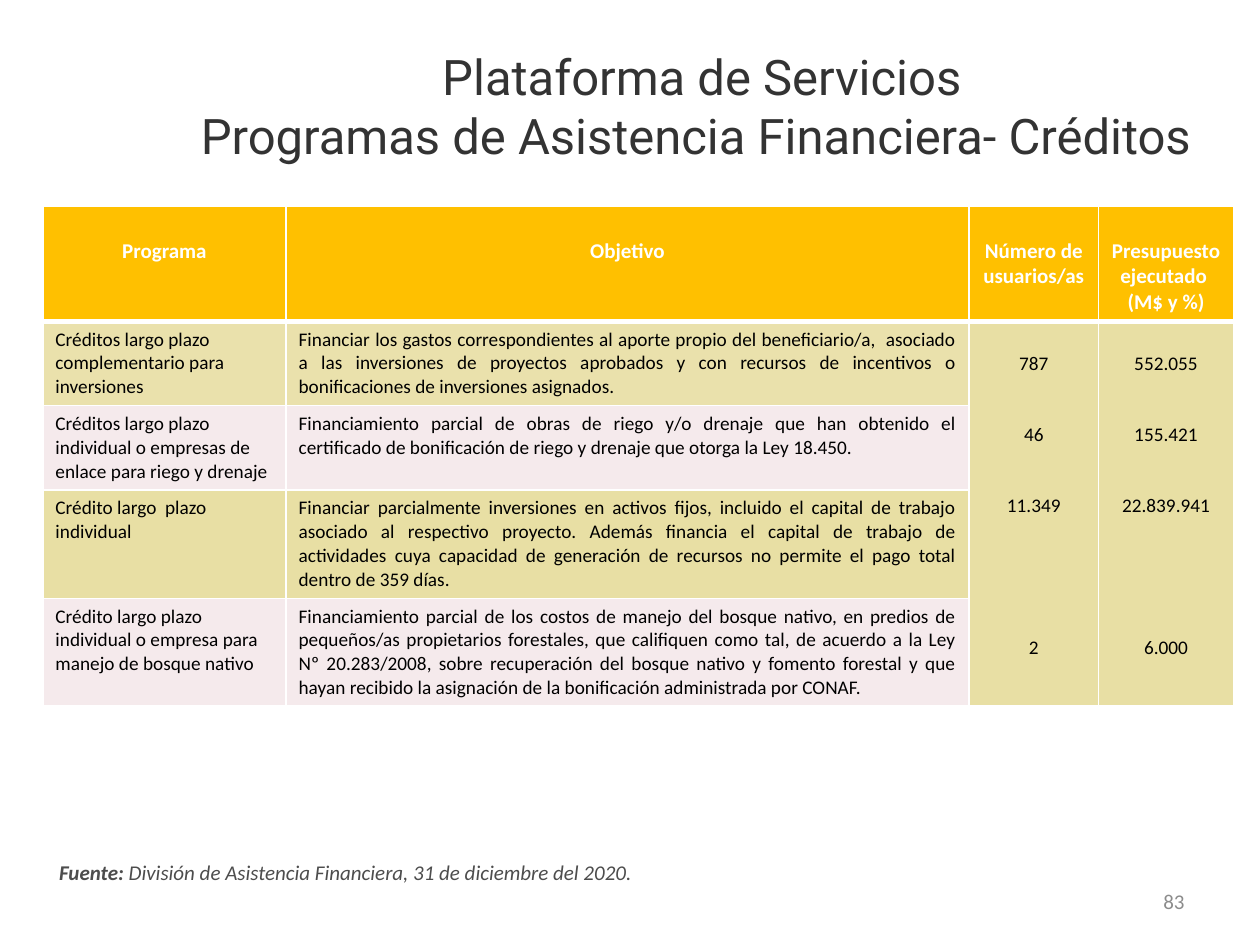
import pptx
import pptx.util
import pptx.dml.color
import pptx.enum.text
import pptx.oxml
import pptx.oxml.ns

Inches, Pt = pptx.util.Inches, pptx.util.Pt
ALIGN = pptx.enum.text.PP_ALIGN
MIDDLE = pptx.enum.text.MSO_ANCHOR.MIDDLE


def color(code):
    return pptx.dml.color.RGBColor.from_string(code)


def add_run(para, text, size, code, bold=False, italic=False, face="Calibri"):
    run = para.add_run()
    run.text = text
    font = run.font
    font.name, font.size, font.bold, font.italic = face, Pt(size), bold, italic
    font.color.rgb = color(code)


deck = pptx.Presentation()
deck.slide_width, deck.slide_height = Inches(10), Inches(7.5)
slide = deck.slides.add_slide(deck.slide_layouts[5])

# Title
title = slide.shapes.title
title.left, title.top = Inches(1.36), Inches(0.21)
title.width, title.height = Inches(8.42), Inches(1.25)
frame = title.text_frame
frame.auto_size = pptx.enum.text.MSO_AUTO_SIZE.NONE
frame.vertical_anchor = MIDDLE
para = frame.paragraphs[0]
para.alignment = ALIGN.CENTER
add_run(para, "Plataforma de Servicios", 28, "333333", face="Roboto")
para.add_line_break()
add_run(para, "Programas de Asistencia Financiera- Créditos ", 28, "333333", face="Roboto")

# Table
heads = [["Programa"], ["Objetivo"], ["Número de usuarios/as"],
         ["Presupuesto ejecutado ", "(M$ y %)"]]
loans = [
    ("Créditos largo plazo complementario para inversiones",
     "Financiar los gastos correspondientes al aporte propio del beneficiario/a,  asociado a las "
     "inversiones de proyectos aprobados y con recursos de incentivos o bonificaciones de "
     "inversiones asignados. "),
    ("Créditos largo plazo individual o empresas de enlace para riego y drenaje",
     "Financiamiento parcial de obras de riego y/o drenaje que han obtenido el certificado de "
     "bonificación de riego y drenaje que otorga la Ley 18.450."),
    ("Crédito largo  plazo individual",
     "Financiar parcialmente inversiones en activos fijos, incluido el capital de trabajo asociado "
     "al respectivo proyecto. Además financia el capital de trabajo de actividades cuya capacidad "
     "de generación de recursos no permite el pago total dentro de 359 días. "),
    ("Crédito largo plazo individual o empresa para manejo de bosque nativo",
     "Financiamiento parcial de los costos de manejo del bosque nativo, en predios de pequeños/as "
     "propietarios forestales, que califiquen como tal, de acuerdo a la Ley Nº 20.283/2008, sobre "
     "recuperación del bosque nativo y fomento forestal y que hayan recibido la asignación de la "
     "bonificación administrada por CONAF."),
]
totals = [["787", "46", "11.349", "2"],
          ["552.055", "155.421", "22.839.941", "6.000"]]
gaps = [0, 27, 27, 68]
widths = [1.93, 5.42, 1.03, 1.07]
heights = [0.9, 0.67, 0.67, 0.86, 0.85]

table = slide.shapes.add_table(5, 4, Inches(0.34), Inches(1.64),
                               Inches(sum(widths)), Inches(sum(heights))).table
for col, width in zip(table.columns, widths):
    col.width = Inches(width)
for row, height in zip(table.rows, heights):
    row.height = Inches(height)

# Fills and white borders, thicker under the header
for r in range(5):
    for c in range(4):
        cell = table.cell(r, c)
        cell.fill.solid()
        plain = "F5EAEC" if r % 2 == 0 and c < 2 else "E8DFA4"
        cell.fill.fore_color.rgb = color("FFC000" if r == 0 else plain)
        props = cell._tc.get_or_add_tcPr()
        if r == 1 and c < 2:
            tint = props.find(".//" + pptx.oxml.ns.qn("a:srgbClr"))
            tint.append(pptx.oxml.parse_xml(
                f'<a:alpha {pptx.oxml.ns.nsdecls("a")} val="91000"/>'))
        for i, side in enumerate("LRTB"):
            thick = (r, side) in [(0, "B"), (1, "T")]
            props.insert(i, pptx.oxml.parse_xml(
                f'<a:ln{side} {pptx.oxml.ns.nsdecls("a")} w="{Pt(3 if thick else 1)}">'
                f'<a:solidFill><a:srgbClr val="FFFFFF"/></a:solidFill></a:ln{side}>'))

for c, lines in enumerate(heads):
    cell = table.cell(0, c)
    cell.margin_top = Inches(0.25)
    for i, line in enumerate(lines):
        para = cell.text_frame.add_paragraph() if i else cell.text_frame.paragraphs[0]
        para.alignment = ALIGN.CENTER
        add_run(para, line, 12, "FFFFFF", bold=True)

for r, loan in enumerate(loans, 1):
    for c, text in enumerate(loan):
        para = table.cell(r, c).text_frame.paragraphs[0]
        para.alignment = ALIGN.JUSTIFY if c else ALIGN.LEFT
        add_run(para, text, 11, "000000")

for c, values in enumerate(totals, 2):
    cell = table.cell(1, c)
    cell.merge(table.cell(4, c))
    cell.margin_top = Inches(0.24)
    for i, (value, gap) in enumerate(zip(values, gaps)):
        para = cell.text_frame.add_paragraph() if i else cell.text_frame.paragraphs[0]
        para.alignment = ALIGN.CENTER
        if i:
            para.space_before = Pt(gap)
        add_run(para, value, 11, "000000")

# Source note
note = slide.shapes.add_textbox(Inches(0.37), Inches(6.77), Inches(8.19), Inches(0.3))
note.text_frame.word_wrap = True
para = note.text_frame.paragraphs[0]
add_run(para, "Fuente: ", 12, "4D4D4D", bold=True, italic=True)
add_run(para, "División de Asistencia Financiera, 31 de diciembre del 2020.", 12, "4D4D4D",
        italic=True)

# Page number
page = slide.shapes.add_textbox(Inches(7.17), Inches(6.95), Inches(2.33), Inches(0.4))
page.text_frame.word_wrap = True
page.text_frame.vertical_anchor = MIDDLE
para = page.text_frame.paragraphs[0]
para.alignment = ALIGN.RIGHT
add_run(para, "83", 12, "8C8C8C")

deck.save("out.pptx")
